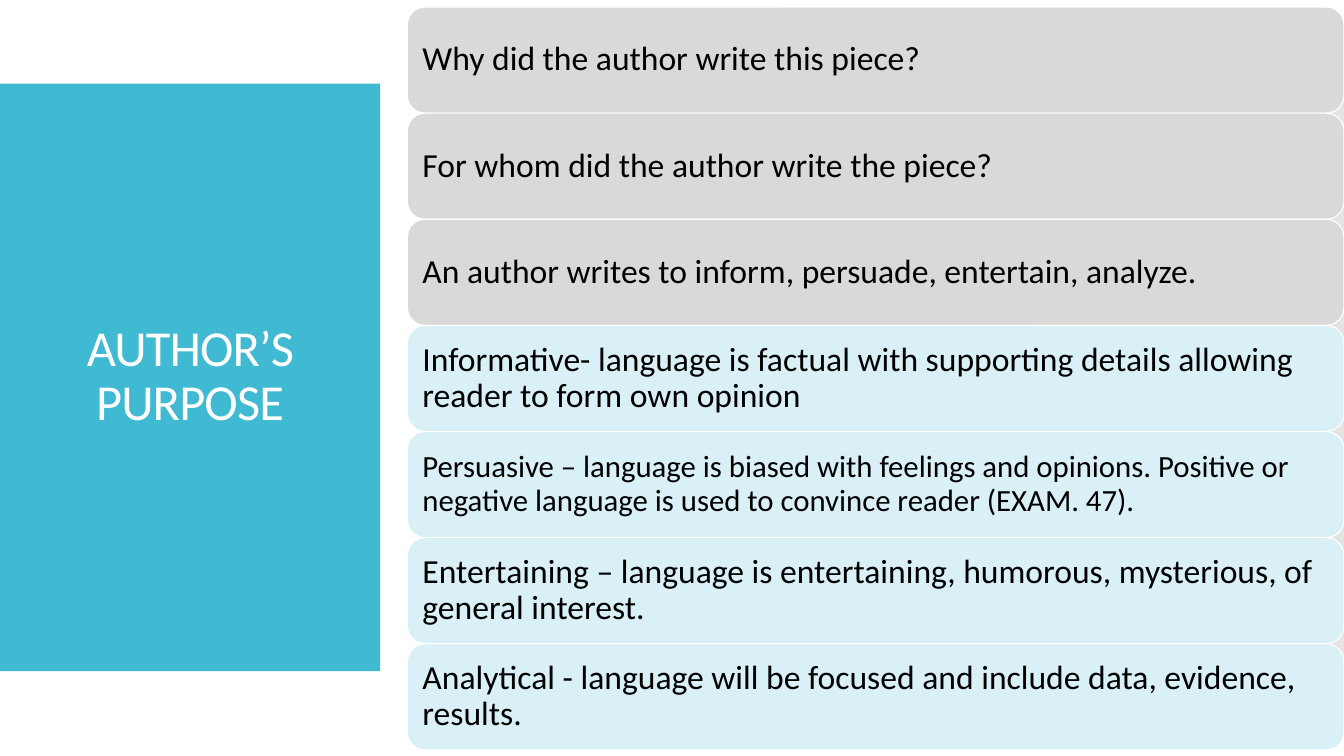
from lxml import etree
from pptx import Presentation
from pptx import util as u
from pptx.dml.color import RGBColor
from pptx.enum import shapes, text
from pptx.oxml.ns import qn

TEAL = RGBColor(0x40, 0xBA, 0xD2)
PALE_TEAL = RGBColor(0xD9, 0xF1, 0xF6)
GRAY = RGBColor(0xD9, 0xD9, 0xD9)
STRIP_GRAY = RGBColor(0xC8, 0xC8, 0xC8)
WHITE = RGBColor(0xFF, 0xFF, 0xFF)
BLACK = RGBColor(0x00, 0x00, 0x00)

WIDTH, HEIGHT = 13.33, 7.5
BAND_TOP, BAND_HEIGHT = 0.83, 5.83
ROWS_LEFT, ROWS_TOP, ROWS_BOTTOM = 4.04, 0.07, 7.44

QUESTIONS = [
    "Why did the author write this piece?",
    "For whom did the author write the piece?",
    "An author writes to inform, persuade, entertain, analyze.",
]
PURPOSES = [
    "Informative- language is factual with supporting details allowing reader to form own opinion",
    "Persuasive – language is biased with feelings and opinions. Positive or negative language "
    "is used to convince reader (EXAM. 47).",
    "Entertaining – language is entertaining, humorous, mysterious, of general interest.",
    "Analytical - language will be focused and include data, evidence, results.",
]
SMALLER_ROW = 4


class PurposeSlide:
    font = "Calibri"

    def __init__(self, deck):
        self.slide = deck.slides.add_slide(deck.slide_layouts[6])

    def block(self, kind, left, top, width, height, fill):
        block = self.slide.shapes.add_shape(
            kind, *(u.Inches(side) for side in (left, top, width, height)))
        block.shadow.inherit = False
        block.fill.solid()
        block.fill.fore_color.rgb = fill
        block.line.fill.background()
        return block

    def band(self, left, width, fill):
        return self.block(shapes.MSO_SHAPE.RECTANGLE, left, BAND_TOP, width, BAND_HEIGHT, fill)

    def label(self, block, words, size, color, align, margin):
        frame = block.text_frame
        frame_format = {"word_wrap": True, "vertical_anchor": text.MSO_ANCHOR.MIDDLE}
        for side in ("left", "top", "right", "bottom"):
            frame_format[f"margin_{side}"] = u.Inches(margin)
        for name, value in frame_format.items():
            setattr(frame, name, value)
        paragraph = frame.paragraphs[0]
        paragraph.alignment = align
        paragraph.line_spacing = 0.9
        run = paragraph.add_run()
        run.text = words
        for name, value in {"name": self.font, "size": u.Pt(size)}.items():
            setattr(run.font, name, value)
        run.font.color.rgb = color
        return run

    def title_panel(self, title):
        panel = self.band(0, 3.77, TEAL)
        run = self.label(panel, title, 36, WHITE, text.PP_ALIGN.CENTER, 0.38)
        run._r.get_or_add_rPr().set("spc", "-60")

    def edge_strip(self):
        """Half-transparent strip along the right edge."""
        strip = self.band(12.92, WIDTH - 12.92, STRIP_GRAY)
        color = strip._element.spPr.find(qn("a:solidFill"))[0]
        etree.SubElement(color, qn("a:alpha"), val="50000")

    def row(self, index, count, words, fill, size):
        pitch = (ROWS_BOTTOM - ROWS_TOP) / count
        card = self.block(shapes.MSO_SHAPE.ROUNDED_RECTANGLE, ROWS_LEFT,
                          ROWS_TOP + index * pitch, WIDTH - ROWS_LEFT, pitch, fill)
        card.line.color.rgb = WHITE
        card.line.width = u.Pt(0.85)
        self.label(card, words, size, BLACK, text.PP_ALIGN.LEFT, 0.1)


def main():
    deck = Presentation()
    deck.slide_width, deck.slide_height = u.Inches(WIDTH), u.Inches(HEIGHT)
    page = PurposeSlide(deck)
    page.title_panel("AUTHOR’S PURPOSE")
    page.edge_strip()
    statements = QUESTIONS + PURPOSES
    for index, words in enumerate(statements):
        fill = GRAY if index < len(QUESTIONS) else PALE_TEAL
        size = 22 if index == SMALLER_ROW else 24
        page.row(index, len(statements), words, fill, size)
    deck.save("out.pptx")


if __name__ == "__main__":
    main()
